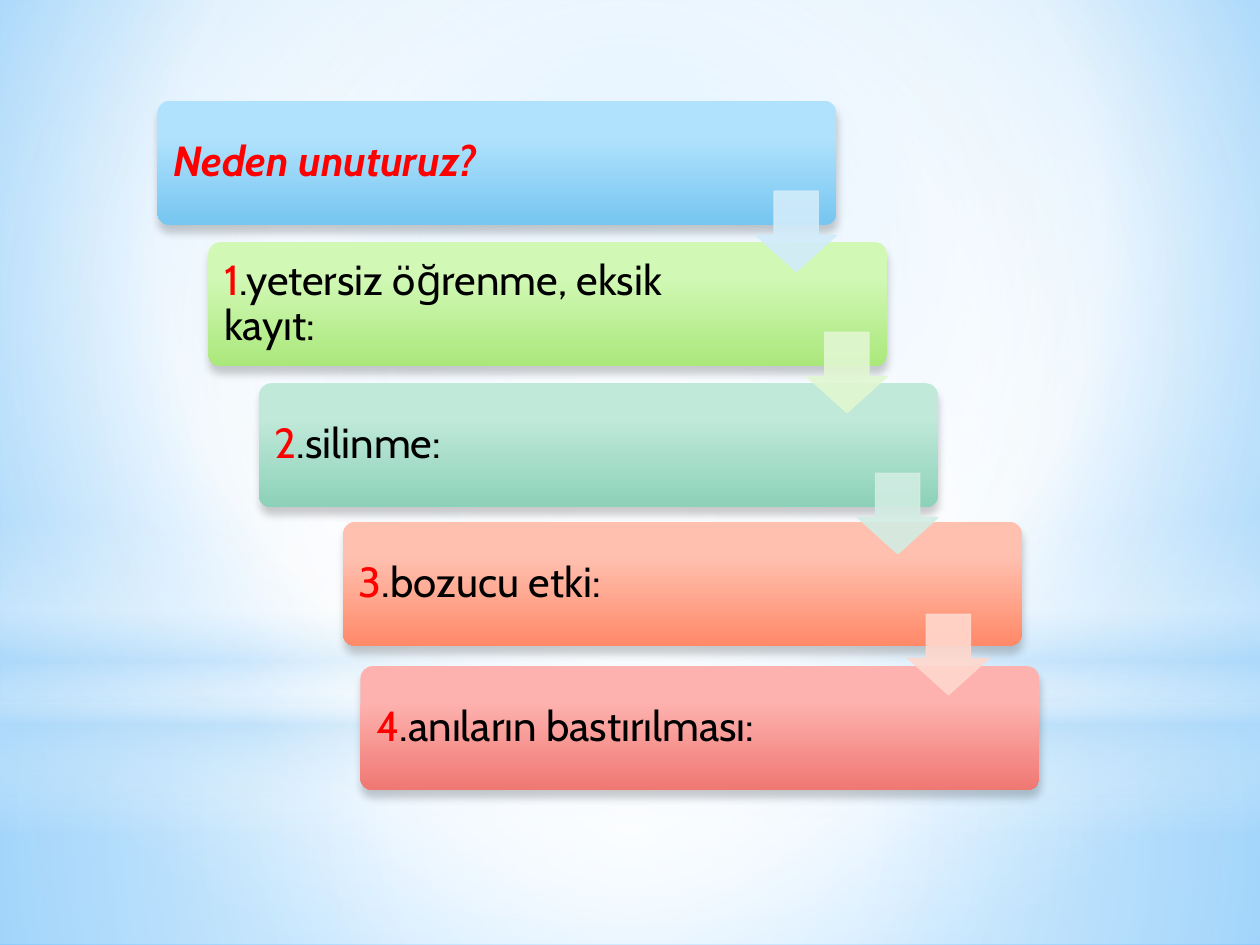
from lxml import etree
from pptx import Presentation
from pptx.dml.color import RGBColor
from pptx.enum import shapes, text
from pptx.oxml import ns
from pptx.util import Pt

COLORS = {
    "sky": "9ED5FF", "deep": "5BB9FF", "mist": "B4DCFA", "white": "FFFFFF",
    "black": "000000", "red": "FF0000",
}
CARDS = [
    (90, 57.6, "B1E2FD", "76C6F1", "Neden unuturuz?", ""),
    (119, 138.4, "D1F8B5", "AAE87B", "1", ".yetersiz öğrenme, eksik kayıt:"),
    (148, 219, "C0E9DA", "8CD1B8", "2", ".silinme:"),
    (196, 298.2, "FFC0AF", "FF8968", "3", ".bozucu etki:"),
    (206, 380.7, "FDB2AF", "F07873", "4", ".anıların bastırılması:"),
]
ARROW_COLORS = ["D2ECFA", "E1F7D1", "D2EDE3", "FFD8CD"]
CARD_SIZE = (388, 70.8)
ARROW_SIZE = 46


def add(parent, tag, **attributes):
    child = etree.SubElement(parent, ns.qn(tag))
    for key, value in attributes.items():
        child.set(key, str(value))
    return child


def add_color(parent, color, opacity=100):
    node = add(parent, "a:srgbClr", val=color)
    if opacity < 100:
        add(node, "a:alpha", val=opacity * 1000)


def set_gradient(holder, stops, focus=None):
    old = holder.find(ns.qn("a:noFill"))
    gradient = etree.Element(ns.qn("a:gradFill"), rotWithShape="1")
    stop_list = add(gradient, "a:gsLst")
    for position, color, opacity in stops:
        add_color(add(stop_list, "a:gs", pos=position * 1000), color, opacity)
    if focus:
        circle = add(gradient, "a:path", path="circle")
        add(circle, "a:fillToRect", **{side: value * 1000 for side, value in zip("ltrb", focus)})
    else:
        add(gradient, "a:lin", ang=5400000, scaled=0)
    holder.replace(old, gradient)


def add_shape(slide, kind, box):
    shape = slide.shapes.add_shape(kind, *map(Pt, box))
    shape.shadow.inherit = False
    shape.fill.background()
    shape.line.fill.background()
    return shape


def add_backdrop(slide, box):
    left, top, width, height = box
    white, mist = COLORS["white"], COLORS["mist"]
    center = (50, 50, 50, 50)
    rectangle, oval = shapes.MSO_SHAPE.RECTANGLE, shapes.MSO_SHAPE.OVAL
    slide.background.fill.background()
    set_gradient(slide.element.find(".//" + ns.qn("p:bgPr")),
                 [(0, COLORS["sky"], 100), (60, white, 100), (100, COLORS["deep"], 100)],
                 (20, 10, 20, 60))
    layers = [
        (rectangle, 402, 138, [(0, white, 91), (37, white, 76), (100, mist, 79)], center),
        (rectangle, 0, 402, [(0, white, 89), (48, white, 62), (100, mist, 79)], center),
        (rectangle, 296.6, 180, [(0, white, 0), (29, white, 30), (45, mist, 40),
                                 (55, white, 26), (65, mist, 60), (100, white, 0)], None),
        (oval, 126, 402, [(0, white, 100), (56, white, 0)], center),
    ]
    for kind, offset, depth, stops, focus in layers:
        layer = add_shape(slide, kind, (left, top + offset, width, depth))
        set_gradient(layer.element.spPr, stops, focus)


def add_card(slide, box, light, dark, lead, rest):
    left, top, width, height = box
    card = add_shape(slide, shapes.MSO_SHAPE.ROUNDED_RECTANGLE, box)
    card.adjustments[0] = 0.1
    properties = card.element.spPr
    set_gradient(properties, [(28, light, 100), (100, dark, 100)])
    shadow = add(properties.find(ns.qn("a:effectLst")), "a:outerShdw",
                 blurRad=Pt(5), dist=Pt(4), dir=5400000, rotWithShape=0)
    add_color(shadow, COLORS["black"], 20)

    label_width = 309 if rest else 303
    label = slide.shapes.add_textbox(Pt(left + 2), Pt(top + 2), Pt(label_width), Pt(height - 4))
    frame = label.text_frame
    frame.word_wrap = True
    frame.vertical_anchor = text.MSO_ANCHOR.MIDDLE
    frame.margin_left = frame.margin_right = Pt(7.2)
    frame.margin_top = frame.margin_bottom = Pt(7.2)
    paragraph = frame.paragraphs[0]
    paragraph.line_spacing = 0.9
    paragraph.space_after = Pt(8.4)
    for words, color in ((lead, "red"), (rest, "black")):
        if words:
            run = paragraph.add_run()
            run.text = words
            run.font.name = "Cabin"
            run.font.size = Pt(24)
            run.font.color.rgb = RGBColor.from_string(COLORS[color])
            if not rest:
                run.font.bold = run.font.italic = True


def add_arrow(slide, box, color):
    arrow = add_shape(slide, shapes.MSO_SHAPE.DOWN_ARROW, box)
    arrow.adjustments[0] = 0.55
    arrow.adjustments[1] = 0.45
    arrow.line.width = Pt(0.75)
    for paint in (arrow.fill, arrow.line.fill):
        paint.solid()
        paint.fore_color.rgb = RGBColor.from_string(color)
    for node in arrow.element.spPr.iter(ns.qn("a:srgbClr")):
        add(node, "a:alpha", val=90000)


def add_staircase(slide, box):
    left, top = box[:2]
    for x, y, *content in CARDS:
        add_card(slide, (left + x, top + y, *CARD_SIZE), *content)
    for index, color in enumerate(ARROW_COLORS):
        place = (left + 432 + 29 * index, top + 109.2 + 80.6 * index)
        add_arrow(slide, (*place, ARROW_SIZE, ARROW_SIZE), color)


def main():
    deck = Presentation()
    deck.slide_width, deck.slide_height = Pt(720), Pt(540)
    slide = deck.slides.add_slide(deck.slide_layouts[6])
    page = (0, 0, 720, 540)
    add_backdrop(slide, page)
    add_staircase(slide, page)
    deck.save("out.pptx")


if __name__ == "__main__":
    main()
